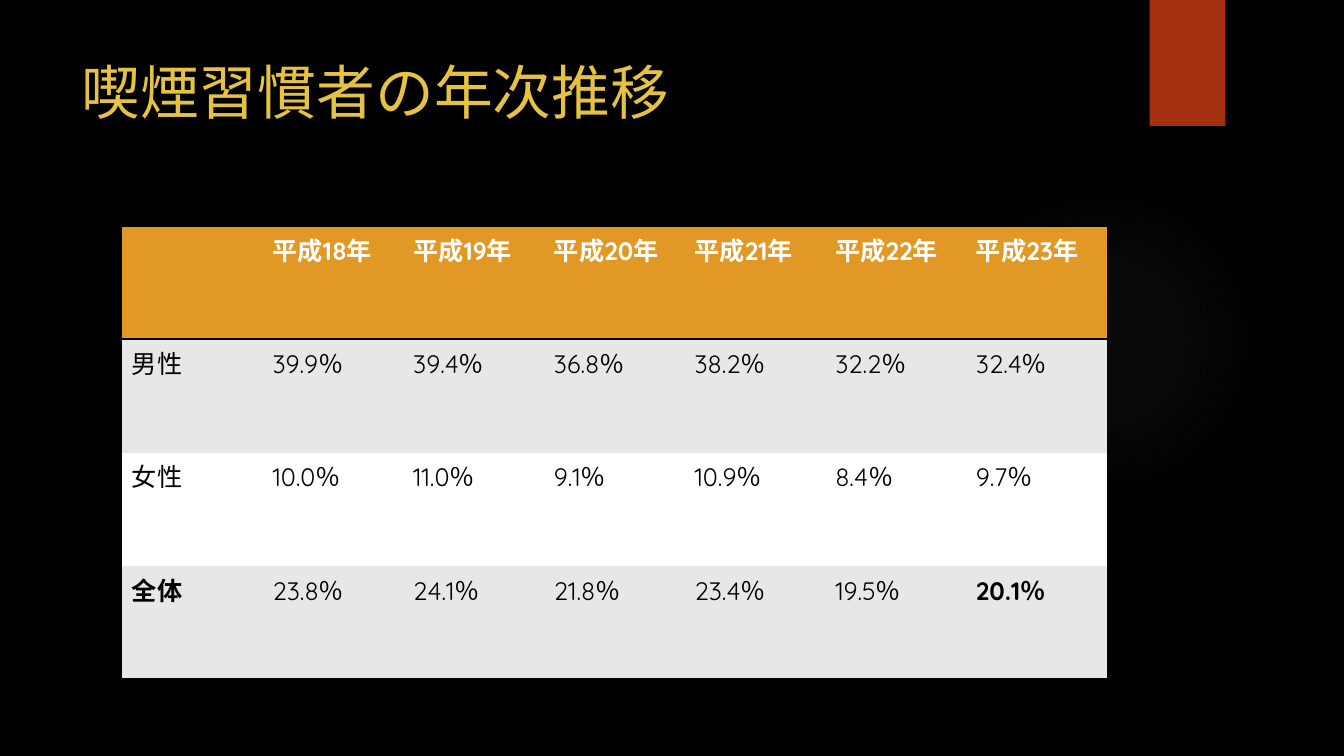
"""Build the slide on yearly smoking rates by sex."""
from lxml import etree
from pptx import Presentation
from pptx.dml.color import RGBColor
from pptx.enum.shapes import MSO_SHAPE as SHAPE
from pptx.oxml import parse_xml
from pptx.oxml.ns import nsdecls, qn
from pptx.util import Pt

PX = 9525
BLACK = RGBColor(0x00, 0x00, 0x00)
WHITE = RGBColor(0xFF, 0xFF, 0xFF)
GREY = RGBColor(0xE7, 0xE7, 0xE7)
ORANGE = RGBColor(0xE1, 0x98, 0x25)
RED = RGBColor(0xA5, 0x30, 0x0F)
GOLD = RGBColor(0xE5, 0xC2, 0x43)
NO_STYLE = "{2D5ABB26-0587-4C30-8999-92F81FD0307C}"


def px(*lengths):
    return [n * PX for n in lengths]


def write(tf, text, size=18, color=BLACK, bold=False):
    r = tf.paragraphs[0].add_run()
    r.text = text
    r.font.name = "Quicksand"
    r.font.size = Pt(size)
    r.font.bold = bold
    r.font.color.rgb = color


prs = Presentation()
prs.slide_width, prs.slide_height = px(1280, 720)
s = prs.slides.add_slide(prs.slide_layouts[6])
s.background.fill.solid()
s.background.fill.fore_color.rgb = BLACK

glow = s.shapes.add_shape(SHAPE.OVAL, *px(903, 176, 296, 296))
glow.shadow.inherit = False
glow.line.fill.background()
stops = "".join(
    f'<a:gs pos="{pos * 1000}"><a:srgbClr val="848484">'
    f'<a:alpha val="{alpha * 1000}"/></a:srgbClr></a:gs>'
    for pos, alpha in [(0, 7), (36, 6), (69, 0)])
glow.fill.background()
no_fill = glow.element.spPr.find(qn("a:noFill"))
glow.element.spPr.replace(no_fill, parse_xml(
    f'<a:gradFill {nsdecls("a")}><a:gsLst>{stops}</a:gsLst><a:path path="circle">'
    '<a:fillToRect l="50000" t="50000" r="50000" b="50000"/></a:path></a:gradFill>'))

ribbon = s.shapes.add_shape(SHAPE.RECTANGLE, *px(1095, 0, 72, 120))
ribbon.shadow.inherit = False
ribbon.fill.solid()
ribbon.fill.fore_color.rgb = RED
ribbon.line.fill.background()

title = s.shapes.add_textbox(*px(68, 48, 988, 147))
title.text_frame.word_wrap = True
write(title.text_frame, "喫煙習慣者の年次推移", size=42, color=GOLD)

rates = {
    "男性": [39.9, 39.4, 36.8, 38.2, 32.2, 32.4],
    "女性": [10.0, 11.0, 9.1, 10.9, 8.4, 9.7],
    "全体": [23.8, 24.1, 21.8, 23.4, 19.5, 20.1],
}
rows = [[""] + [f"平成{year}年" for year in range(18, 24)]]
rows += [[name] + [f"{v:.1f}％" for v in values] for name, values in rates.items()]
fills = [ORANGE, GREY, WHITE, GREY]
borders = {0: ["lnT", "lnB"], 3: ["lnB"]}
bold_cells = ["全体", "20.1％"]

table = s.shapes.add_table(4, 7, *px(116, 215, 938, 432)).table
table._tbl.tblPr.find(qn("a:tableStyleId")).text = NO_STYLE
for i, row in enumerate(rows):
    for j, text in enumerate(row):
        cell = table.cell(i, j)
        for side in borders.get(i, []):
            ln = etree.SubElement(cell._tc.get_or_add_tcPr(), qn(f"a:{side}"), w=str(Pt(2)))
            solid = etree.SubElement(ln, qn("a:solidFill"))
            etree.SubElement(solid, qn("a:srgbClr"), val=str(BLACK))
        cell.fill.solid()
        cell.fill.fore_color.rgb = fills[i]
        if text:
            write(cell.text_frame, text, color=BLACK if i else WHITE,
                  bold=i == 0 or text in bold_cells)

prs.save("out.pptx")
